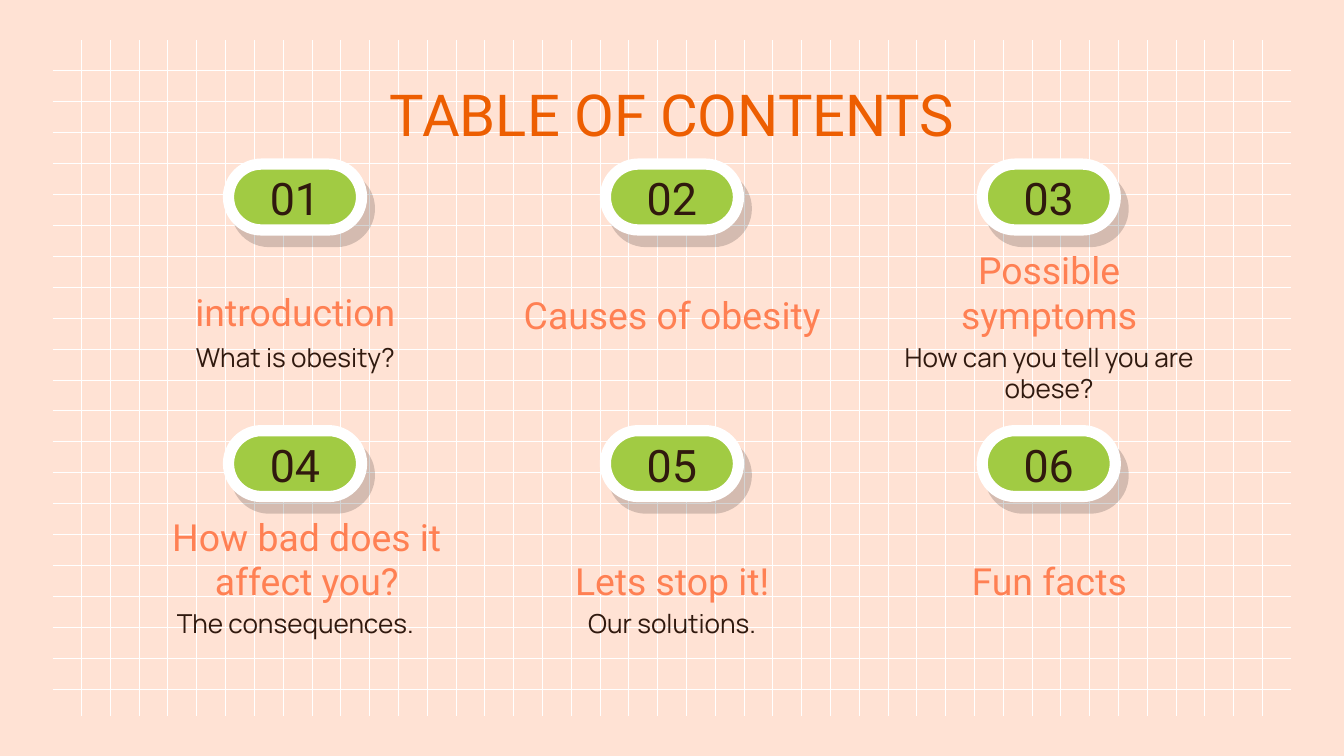
from lxml import etree
from pptx import Presentation
from pptx.dml.color import RGBColor
from pptx.enum.shapes import MSO_CONNECTOR, MSO_SHAPE
from pptx.enum.text import MSO_ANCHOR, PP_ALIGN
from pptx.oxml import parse_xml
from pptx.oxml.ns import nsdecls, qn
from pptx.util import Pt

STRAIGHT = MSO_CONNECTOR.STRAIGHT
PILL = MSO_SHAPE.ROUNDED_RECTANGLE
CENTER = PP_ALIGN.CENTER
TOP, MIDDLE, BOTTOM = MSO_ANCHOR.TOP, MSO_ANCHOR.MIDDLE, MSO_ANCHOR.BOTTOM

COLORS = {
    "background": "FFE2D4",
    "white": "FFFFFF",
    "green": "A1CB43",
    "title": "ED5E01",
    "heading": "FF8053",
    "dark": "30190E",
    "shadow": "000000",
}

ENTRIES = [
    ("introduction", "What is obesity?"),
    ("Causes of obesity", None),
    ("Possible symptoms", "How can you tell you are obese?"),
    ("How bad does it affect you?", "The consequences."),
    ("Lets stop it!", "Our solutions."),
    ("Fun facts", None),
]
HEADING_WIDTHS = {3: 188}
HEADING_SHIFTS = {0: -1.4}
COLUMNS = 3
COLUMN_STEP, ROW_STEP = 201.9, 142.8
TEXT_WIDTH = 175.8


class Deck:
    heading_font = "Roboto"
    body_font = "Manrope"
    inset = Pt(7.2)

    def __init__(self, width, height):
        self.prs = Presentation()
        self.prs.slide_width, self.prs.slide_height = Pt(width), Pt(height)
        self.s = self.prs.slides.add_slide(self.prs.slide_layouts[6])
        fill = self.s.background.fill
        fill.solid()
        fill.fore_color.rgb = self.color("background")

    def color(self, name):
        return RGBColor.from_string(COLORS[name])

    def line(self, x1, y1, x2, y2):
        sp = self.s.shapes.add_connector(STRAIGHT, Pt(x1), Pt(y1), Pt(x2), Pt(y2))
        sp.line.color.rgb = self.color("white")
        sp.line.width = Pt(0.52)
        etree.SubElement(sp._element.spPr, qn("a:effectLst"))

    def pill(self, x, y, w, h):
        sp = self.s.shapes.add_shape(PILL, Pt(x), Pt(y), Pt(w), Pt(h))
        sp.adjustments[0] = 0.5
        sp.fill.solid()
        sp.fill.fore_color.rgb = self.color("green")
        sp.line.color.rgb = self.color("white")
        sp.line.width = Pt(6)
        sp._element.spPr.append(parse_xml(
            f'<a:effectLst {nsdecls("a")}>'
            f'<a:outerShdw dist="{Pt(7.5)}" dir="{56 * 60000}" algn="bl" rotWithShape="0">'
            f'<a:srgbClr val="{COLORS["shadow"]}"><a:alpha val="17000"/></a:srgbClr>'
            '</a:outerShdw></a:effectLst>'))

    def text(self, x, y, w, h, text, size, color, font=heading_font, anchor=TOP):
        sp = self.s.shapes.add_textbox(Pt(x), Pt(y), Pt(w), Pt(h))
        tf = sp.text_frame
        tf.word_wrap = True
        tf.vertical_anchor = anchor
        tf.margin_left = tf.margin_right = self.inset
        tf.margin_top = tf.margin_bottom = self.inset
        p = tf.paragraphs[0]
        p.alignment = CENTER
        r = p.add_run()
        r.text = text
        r.font.size = Pt(size)
        r.font.name = font
        r.font.color.rgb = self.color(color)


def draw_grid(deck):
    for i in range(21):
        y = 37.8 + i * 16.58
        deck.line(28.2, y, 691.8, y)
    for i in range(42):
        x = 43.7 + i * 15.43
        deck.line(x, 21.6, x, 383.8)


def draw_entry(deck, index, heading, detail):
    row, column = divmod(index, COLUMNS)
    dx, dy = column * COLUMN_STEP, row * ROW_STEP
    left = 70.4 + dx
    deck.pill(122.4 + dx, 87.9 + dy, 71.3, 35.3)
    deck.text(129.9 + dx, 92 + dy, 56.2, 28.1, f"{index + 1:02}", 24, "dark", anchor=MIDDLE)
    if detail:
        deck.text(left, 175.6 + dy, TEXT_WIDTH, 45.4, detail, 14, "dark", deck.body_font)
    deck.text(left, 131.4 + dy + HEADING_SHIFTS.get(index, 0),
              HEADING_WIDTHS.get(index, TEXT_WIDTH), 56.2, heading, 20, "heading", anchor=BOTTOM)


def main():
    deck = Deck(720, 405)
    draw_grid(deck)
    deck.text(56.7, 35.1, 606.6, 45.1, "TABLE OF CONTENTS", 31, "title")
    for index, (heading, detail) in enumerate(ENTRIES):
        draw_entry(deck, index, heading, detail)
    deck.prs.save("out.pptx")


if __name__ == "__main__":
    main()
